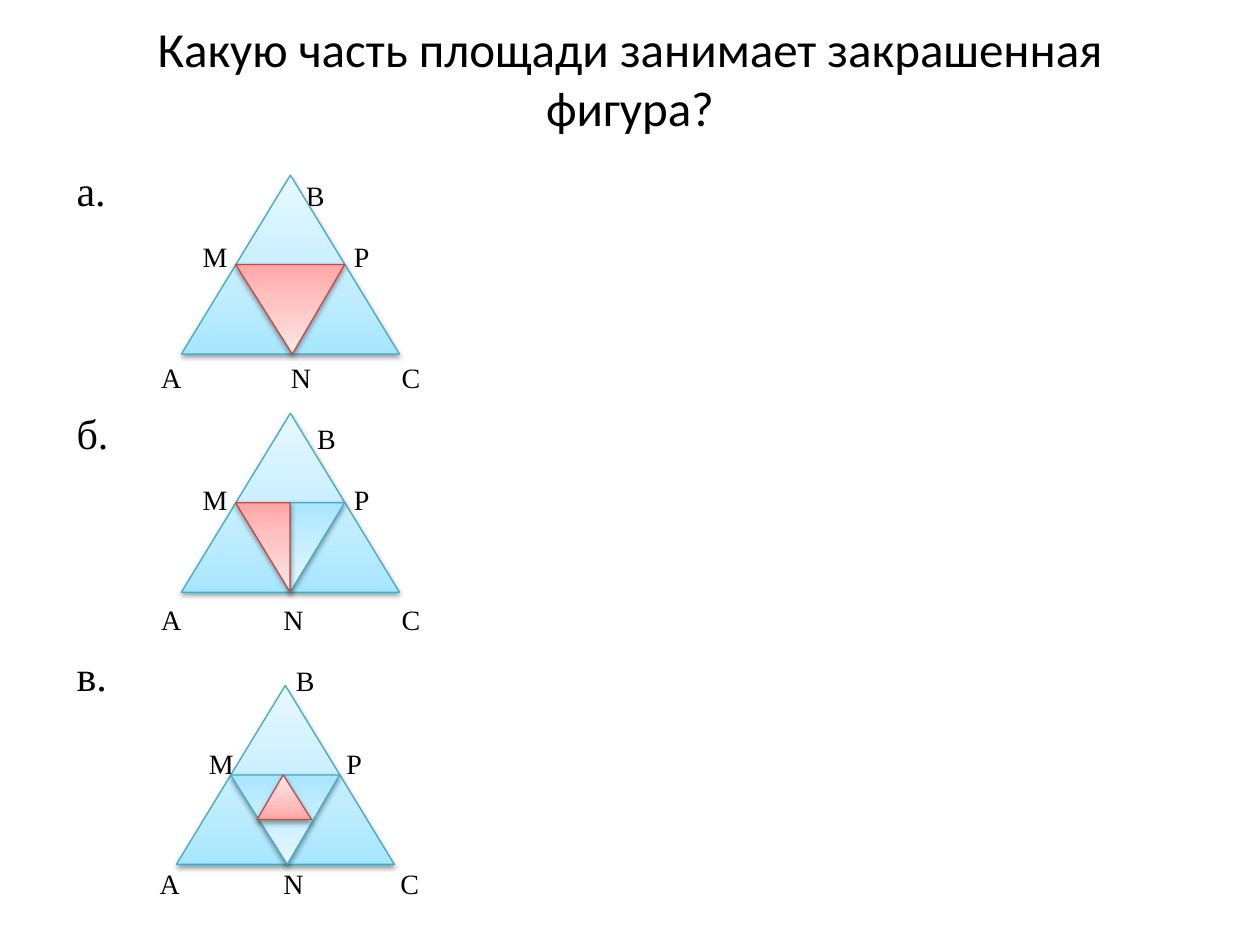
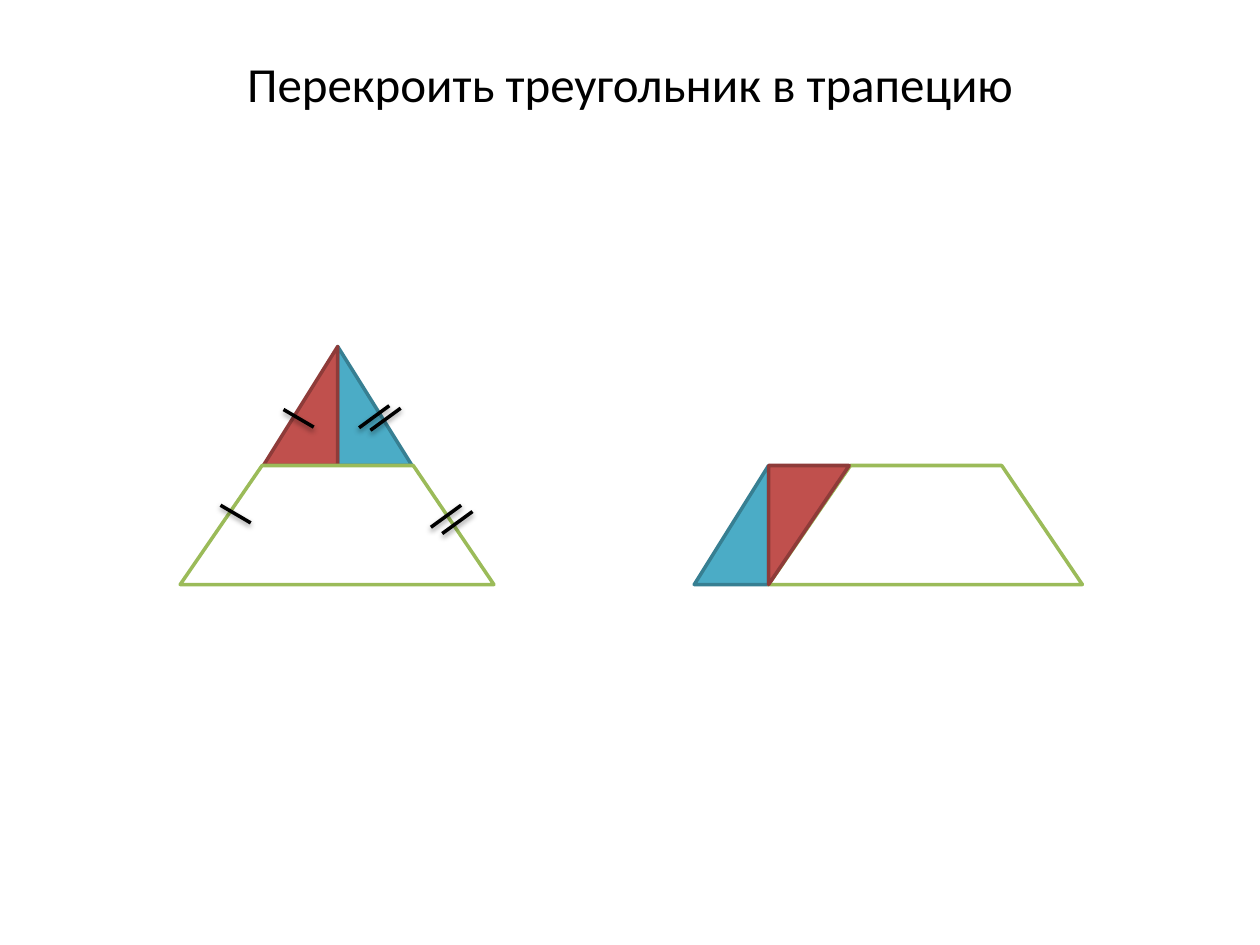
from lxml.etree import SubElement
from pptx import Presentation
from pptx.dml.color import RGBColor
from pptx.enum.shapes import MSO_CONNECTOR, MSO_SHAPE as Preset
from pptx.enum.text import MSO_ANCHOR, PP_ALIGN
from pptx.oxml.ns import qn
from pptx.util import Inches, Pt

COLUMNS, ROWS, CELL = 100, 75, 0.1
TITLE_FONT, LABEL_FONT = "Calibri", "Times New Roman"
BLACK = RGBColor(0, 0, 0)
WHITE = RGBColor(255, 255, 255)
TEAL, TEAL_EDGE = RGBColor(0x4B, 0xAC, 0xC6), RGBColor(0x37, 0x7F, 0x92)
RED, RED_EDGE = RGBColor(0xC0, 0x50, 0x4D), RGBColor(0x8E, 0x3B, 0x39)
GREEN = RGBColor(0x9B, 0xBB, 0x59)
SKY_EDGE, ROSE_EDGE = RGBColor(0x46, 0xAA, 0xC5), RGBColor(0xBF, 0x4C, 0x48)
SKY_STOPS = [(0, RGBColor(0xA7, 0xE6, 0xFF)), (35, RGBColor(0xC1, 0xED, 0xFF)),
             (100, RGBColor(0xE7, 0xF8, 0xFF))]
ROSE_STOPS = [(0, RGBColor(0xFF, 0xA6, 0xA5)), (35, RGBColor(0xFF, 0xC0, 0xBF)),
              (100, RGBColor(0xFF, 0xE7, 0xE7))]
SKY, ROSE = (SKY_STOPS, SKY_EDGE), (ROSE_STOPS, ROSE_EDGE)
BIG_WIDTH, BIG_HEIGHT = 17.3, 14.2
INNER_TIP = 0.48

LABEL_ROWS = [
    (0, "а.", [("B", 18.2)]),
    (6.1, "", [("M", 10), ("P", 22)]),
    (39.8, "", [("A", 6.7), ("N", 17), ("C", 25.8)]),
    (6.1, "б.", [("B", 19.1)]),
    (6.1, "", [("M", 10), ("P", 22)]),
    (39.8, "", [("A", 6.7), ("N", 16.4), ("C", 25.8)]),
    (6.1, "в.", [("B", 17.4)]),
    (18.7, "", [("M", 10.5), ("P", 21.4)]),
    (39.8, "", [("A", 6.6), ("N", 16.4), ("C", 25.7)]),
]


def grid(cells):
    """Turn grid cells into a length."""
    return Inches(cells * CELL)


def add_span(para, text, font, size):
    """Add one black run."""
    span = para.add_run()
    span.text = text
    span.font.name, span.font.size = font, Pt(size)
    span.font.color.rgb = BLACK


def add_box(page, *place):
    """Add a wrapping text box and return its frame."""
    frame = page.shapes.add_textbox(*map(grid, place)).text_frame
    frame.word_wrap = True
    return frame


def add_title(page, text, top, height):
    """Add the centred page title."""
    frame = add_box(page, 5, top, 90, height)
    frame.vertical_anchor = MSO_ANCHOR.MIDDLE
    para = frame.paragraphs[0]
    para.alignment = PP_ALIGN.CENTER
    add_span(para, text, TITLE_FONT, 28)


def add_labels(page):
    """Add task letters and vertex names, placed by tab stops."""
    frame = add_box(page, 5.1, 12.6, 90, 60.6)
    for index, (gap, letter, names) in enumerate(LABEL_ROWS):
        para = frame.add_paragraph() if index else frame.paragraphs[0]
        para.space_before = Pt(gap)
        tabs = SubElement(para._p.get_or_add_pPr(), qn("a:tabLst"))
        for _, stop in names:
            SubElement(tabs, qn("a:tab"), pos=str(grid(stop)), algn="l")
        add_span(para, letter + "\t", LABEL_FONT, 24)
        add_span(para, "\t".join(name for name, _ in names), LABEL_FONT, 16)


def add_shadow(shape):
    """Give a shape or connector a soft shadow below it."""
    effects = SubElement(shape._element.spPr, qn("a:effectLst"))
    shadow = SubElement(effects, qn("a:outerShdw"), blurRad=str(Pt(3.1)),
                        dist=str(Pt(1.6)), dir="5400000", rotWithShape="0")
    tone = SubElement(shadow, qn("a:srgbClr"), val=str(BLACK))
    SubElement(tone, qn("a:alpha"), val="38000")


def paint_soft(shape, style, angle=90):
    """Apply a three-stop gradient, a thin edge and a shadow."""
    stops, edge = style
    shape.fill.gradient()
    shape.fill.gradient_angle = angle
    stop_list = shape._element.spPr.find(".//" + qn("a:gsLst"))
    for old in list(stop_list):
        stop_list.remove(old)
    for share, color in stops:
        stop = SubElement(stop_list, qn("a:gs"), pos=str(share * 1000))
        SubElement(stop, qn("a:srgbClr"), val=str(color))
    shape.line.color.rgb, shape.line.width = edge, Pt(0.75)
    add_shadow(shape)


def paint_flat(shape, color, edge):
    """Apply a plain fill and a thick edge."""
    shape.shadow.inherit = False
    shape.fill.solid()
    shape.fill.fore_color.rgb = color
    shape.line.color.rgb, shape.line.width = edge, Pt(2)


def add_preset(page, preset, *place):
    """Add a preset shape at grid cells."""
    return page.shapes.add_shape(preset, *map(grid, place))


def add_polygon(page, *corners):
    """Add a closed outline through grid corners."""
    points = [(grid(x), grid(y)) for x, y in corners]
    builder = page.shapes.build_freeform(*points[0])
    builder.add_line_segments(points[1:], close=True)
    return builder.convert_to_shape()


def add_big_triangle(page, left, top):
    """Add triangle ABC."""
    big = add_preset(page, Preset.ISOSCELES_TRIANGLE, left, top, BIG_WIDTH, BIG_HEIGHT)
    paint_soft(big, SKY)


def add_inner_triangle(page, style, left, top, share, rotation=0):
    """Add a triangle that is a share of ABC in size."""
    inner = add_preset(page, Preset.ISOSCELES_TRIANGLE, left, top,
                       BIG_WIDTH * share, BIG_HEIGHT * share)
    inner.adjustments[0] = INNER_TIP
    inner.rotation = rotation
    paint_soft(inner, style)


def add_halves(page, left, top):
    """Add the two right halves of triangle MPN."""
    middle, bottom = left + BIG_WIDTH / 4, top + BIG_HEIGHT / 2
    blue = add_polygon(page, (left + BIG_WIDTH / 2, top), (middle, bottom), (middle, top))
    paint_soft(blue, SKY, 270)
    red = add_preset(page, Preset.RIGHT_TRIANGLE, left, top, BIG_WIDTH / 4, BIG_HEIGHT / 2)
    red.rotation = 180
    paint_soft(red, ROSE)


def add_trapezoid(page, left, top, bottom):
    """Add the green trapezoid."""
    shape = add_polygon(page, (left, bottom), (left + 6.5, top),
                        (left + 18.5, top), (left + 24.9, bottom))
    paint_flat(shape, WHITE, GREEN)


def add_tick(page, *ends):
    """Add a mark of equal lengths."""
    tick = page.shapes.add_connector(MSO_CONNECTOR.STRAIGHT, *map(grid, ends))
    tick.line.color.rgb, tick.line.width = BLACK, Pt(2)
    add_shadow(tick)


def build_area_page(page):
    """Build the page on shaded areas."""
    add_title(page, "Какую часть площади занимает закрашенная фигура?", 0, 12.3)
    add_labels(page)
    for left, top in ((14.4, 13.9), (14, 54.4), (14.4, 32.8)):
        add_big_triangle(page, left, top)
    add_halves(page, 18.7, 39.9)
    add_inner_triangle(page, ROSE, 18.7, 21, 1 / 2, 180)
    add_inner_triangle(page, SKY, 18.3, 61.5, 1 / 2, 180)
    add_inner_triangle(page, ROSE, 20.4, 61.5, 1 / 4)


def build_recut_page(page):
    """Build the page on recutting a triangle."""
    add_title(page, "Перекроить треугольник в трапецию", 0.3, 12.5)
    apex, middle, base = 27.5, 36.95, 46.4
    right_half = add_preset(page, Preset.RIGHT_TRIANGLE, 26.8, apex, 5.9, middle - apex)
    paint_flat(right_half, TEAL, TEAL_EDGE)
    left_half = add_polygon(page, (20.9, middle), (26.8, apex), (26.8, middle))
    paint_flat(left_half, RED, RED_EDGE)
    moved_teal = add_polygon(page, (55.1, base), (61, middle), (61, base))
    paint_flat(moved_teal, TEAL, TEAL_EDGE)
    for left in (14.3, 61):
        add_trapezoid(page, left, middle, base)
    moved_red = add_polygon(page, (67.4, middle), (61, base), (61, middle))
    paint_flat(moved_red, RED, RED_EDGE)
    for left, top in ((22.5, 32.5), (17.5, 40.1)):
        add_tick(page, left, top, left + 2.4, top + 1.4)
    for right, top, drop in ((36.6, 40.1, 0.5), (30.9, 32.2, 0.2)):
        for step in (0, 1):
            x, y = right + 0.9 * step, top + drop * step
            add_tick(page, x, y, x - 2.4, y + 1.75)


def main():
    """Build and save the deck."""
    deck = Presentation()
    deck.slide_width, deck.slide_height = grid(COLUMNS), grid(ROWS)
    for build in (build_area_page, build_recut_page):
        build(deck.slides.add_slide(deck.slide_layouts[6]))
    deck.save("out.pptx")


if __name__ == "__main__":
    main()
